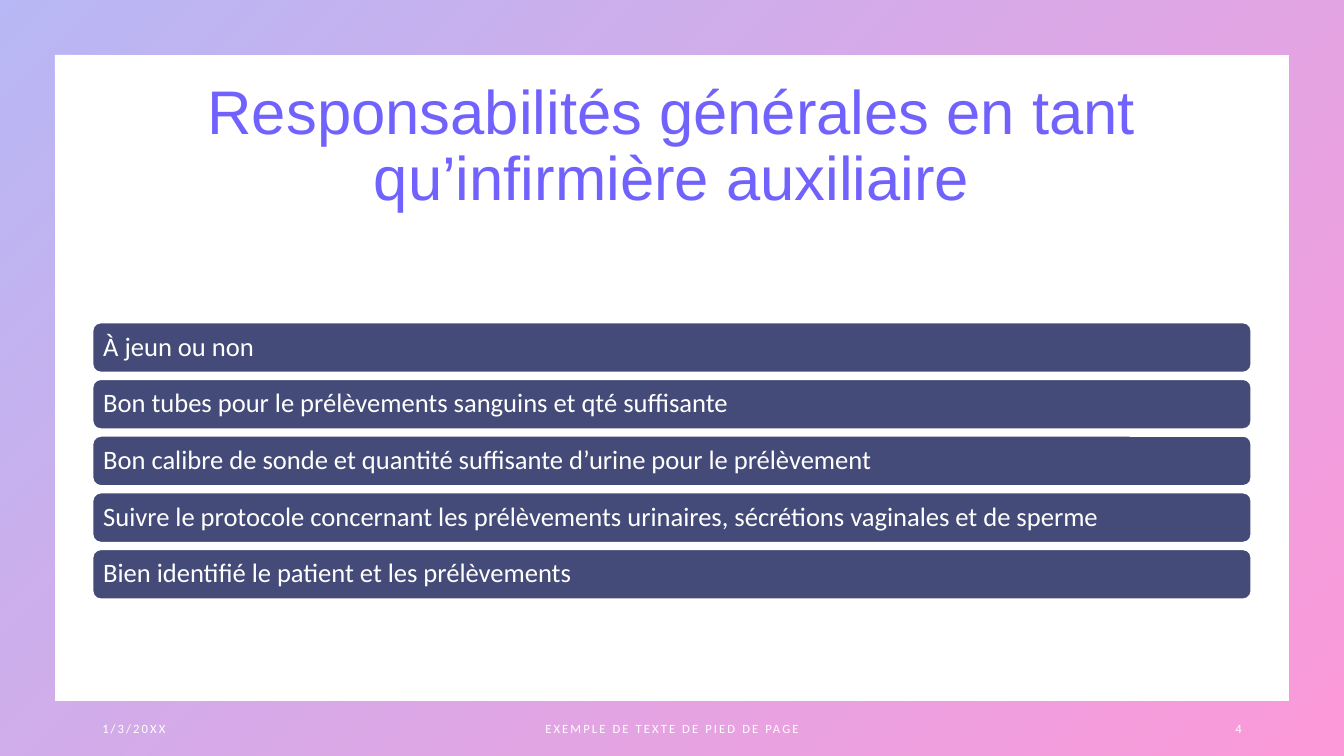
"""Build the slide on the general responsibilities of an auxiliary nurse."""
from dataclasses import dataclass

from lxml.etree import SubElement
from pptx import Presentation
from pptx.dml.color import RGBColor
from pptx.enum.shapes import MSO_SHAPE as Preset
from pptx.enum.text import MSO_ANCHOR as Anchor, PP_ALIGN as Align
from pptx.oxml.ns import qn
from pptx.shapes.autoshape import Shape
from pptx.slide import Slide
from pptx.util import Emu, Pt

PX = 9525
SLIDE_WIDTH, SLIDE_HEIGHT = 1280, 720
COLORS = {
    "frame_start": "4D4EE6",
    "frame_end": "F900A0",
    "title": "7162FE",
    "bar": "454B78",
    "white": "FFFFFF",
}
FRAME_THICKNESS = 0.072
FRAME_ALPHA = 40000
BAR_TOP, BAR_PITCH = 307, 54
DUTIES = [
    "À jeun ou non",
    "Bon tubes pour le prélèvements sanguins et qté suffisante",
    "Bon calibre de sonde et quantité suffisante d’urine pour le prélèvement",
    "Suivre le protocole concernant les prélèvements urinaires, sécrétions vaginales et de sperme",
    "Bien identifié le patient et les prélèvements",
]


@dataclass(frozen=True)
class Box:
    left: int
    top: int
    width: int
    height: int

    def emu(self) -> tuple[Emu, Emu, Emu, Emu]:
        return (Emu(self.left * PX), Emu(self.top * PX),
                Emu(self.width * PX), Emu(self.height * PX))


@dataclass(frozen=True)
class TextStyle:
    font: str
    size: int
    color: str
    line_spacing: float = 1.0
    tracking: int = 0


@dataclass(frozen=True)
class Label:
    text: str
    box: Box
    align: Align
    style: TextStyle


TITLE_STYLE = TextStyle("Arial", 44, "title", line_spacing=0.9)
BAR_STYLE = TextStyle("Calibri", 19, "white", line_spacing=0.9)
FOOTER_STYLE = TextStyle("Calibri", 9, "white", tracking=150)

LABELS = [
    Label("Responsabilités générales en tant qu’infirmière auxiliaire",
          Box(88, 71, 1104, 139), Align.CENTER, TITLE_STYLE),
    Label("1/3/20XX", Box(88, 675, 288, 38), Align.LEFT, FOOTER_STYLE),
    Label("EXEMPLE DE TEXTE DE PIED DE PAGE",
          Box(424, 675, 432, 38), Align.CENTER, FOOTER_STYLE),
    Label("4", Box(904, 675, 288, 38), Align.RIGHT, FOOTER_STYLE),
]


def color(name: str) -> RGBColor:
    return RGBColor.from_string(COLORS[name])


def write(shape: Shape, text: str, align: Align, style: TextStyle) -> None:
    frame = shape.text_frame
    frame.text = text
    frame.word_wrap = True
    frame.vertical_anchor = Anchor.MIDDLE
    paragraph = frame.paragraphs[0]
    paragraph.alignment = align
    paragraph.line_spacing = style.line_spacing
    font = paragraph.runs[0].font
    font.name = style.font
    font.size = Pt(style.size)
    font.color.rgb = color(style.color)
    if style.tracking:
        paragraph.runs[0].font._element.set("spc", str(style.tracking))


def add_frame(slide: Slide) -> None:
    box = Box(0, 0, SLIDE_WIDTH, SLIDE_HEIGHT)
    shape = slide.shapes.add_shape(Preset.FRAME, *box.emu())
    shape.adjustments[0] = FRAME_THICKNESS
    shape.shadow.inherit = False
    shape.line.fill.background()
    shape.fill.gradient()
    shape.fill.gradient_angle = 315
    for stop, name in zip(shape.fill.gradient_stops, ("frame_start", "frame_end")):
        stop.color.rgb = color(name)
    for element in shape.element.spPr.iter(qn("a:srgbClr")):
        SubElement(element, qn("a:alpha"), val=str(FRAME_ALPHA))


def add_label(slide: Slide, label: Label) -> None:
    shape = slide.shapes.add_textbox(*label.box.emu())
    write(shape, label.text, label.align, label.style)


def add_bar(slide: Slide, index: int, text: str) -> None:
    box = Box(88, BAR_TOP + index * BAR_PITCH, 1104, 48)
    shape = slide.shapes.add_shape(Preset.ROUNDED_RECTANGLE, *box.emu())
    shape.shadow.inherit = False
    shape.fill.solid()
    shape.fill.fore_color.rgb = color("bar")
    shape.line.color.rgb = color("white")
    shape.line.width = Pt(1.5)
    write(shape, text, Align.LEFT, BAR_STYLE)
    shape.text_frame.margin_left = shape.text_frame.margin_right = Emu(8 * PX)


def main() -> None:
    presentation = Presentation()
    presentation.slide_width = Emu(SLIDE_WIDTH * PX)
    presentation.slide_height = Emu(SLIDE_HEIGHT * PX)
    slide = presentation.slides.add_slide(presentation.slide_layouts[6])
    add_frame(slide)
    for label in LABELS:
        add_label(slide, label)
    for index, duty in enumerate(DUTIES):
        add_bar(slide, index, duty)
    presentation.save("out.pptx")


if __name__ == "__main__":
    main()
